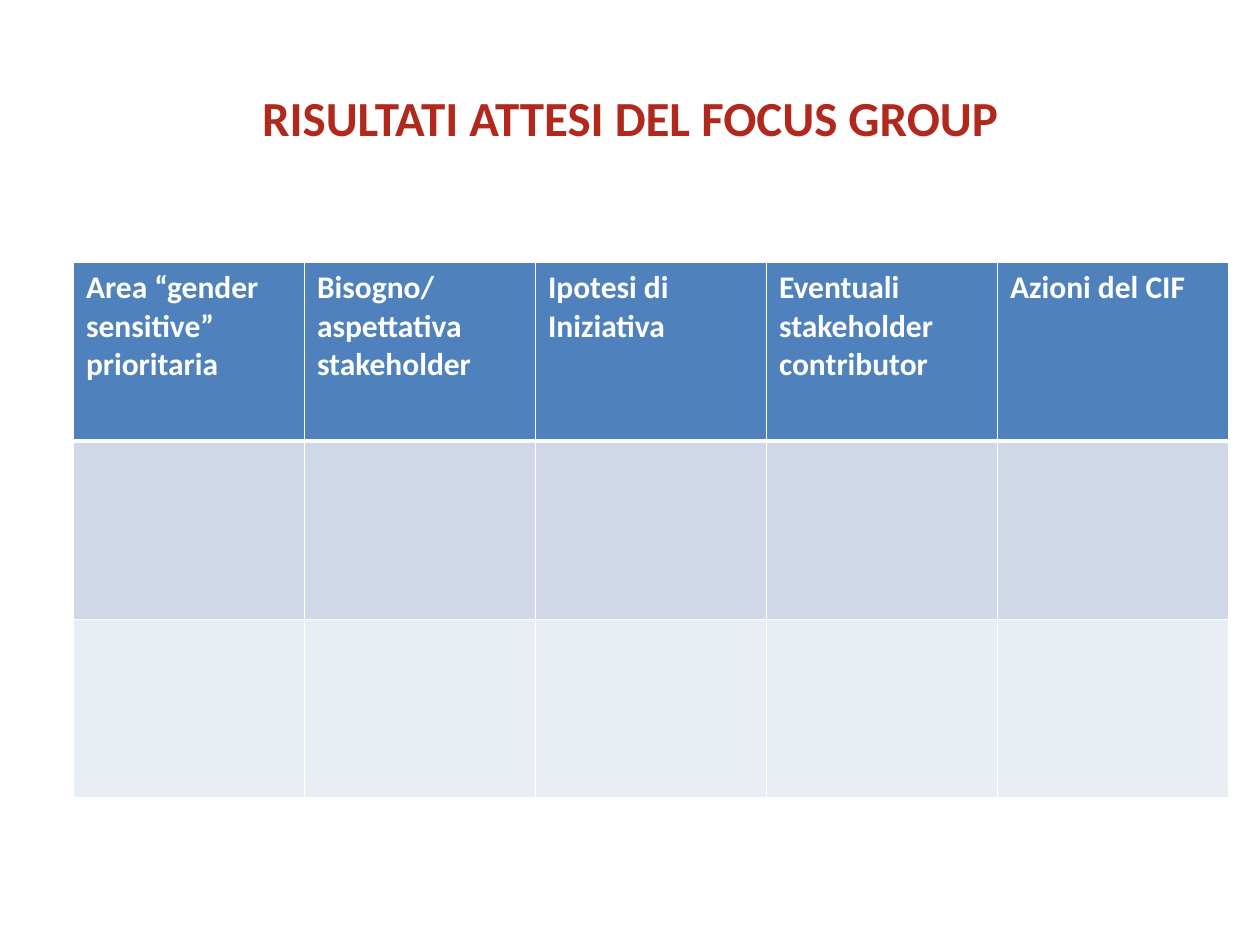
from lxml import etree
from pptx import Presentation, util as u
from pptx.dml.color import RGBColor
from pptx.enum import text
from pptx.oxml.ns import qn

HEADERS = [
    "Area “gender sensitive” prioritaria",
    "Bisogno/aspettativa stakeholder",
    "Ipotesi di Iniziativa",
    "Eventuali stakeholder contributor",
    "Azioni del CIF",
]
ROW_FILLS = ["4F81BD", "D0D8E8", "E9EDF4"]


def color(value):
    return RGBColor.from_string(value)


def write(tf, content, *, font, size, fill, bold=False,
          align=text.PP_ALIGN.LEFT, anchor=text.MSO_ANCHOR.TOP):
    tf.word_wrap = True
    tf.vertical_anchor = anchor
    p = tf.paragraphs[0]
    p.alignment = align
    r = p.add_run()
    r.text = content
    r.font.name = font
    r.font.size = u.Pt(size)
    r.font.bold = bold
    r.font.color.rgb = color(fill)


class SlideBuilder:
    font = "Calibri"
    title_color = "B1291C"
    white = "FFFFFF"

    def __init__(self, s):
        self.s = s

    def title(self, content, x, y, w, h):
        sp = self.s.shapes.add_textbox(u.Cm(x), u.Cm(y), u.Cm(w), u.Cm(h))
        write(sp.text_frame, content, font=self.font, size=28, bold=True,
              fill=self.title_color, align=text.PP_ALIGN.CENTER,
              anchor=text.MSO_ANCHOR.MIDDLE)

    def border(self, cell, side, width):
        tc_pr = cell._tc.get_or_add_tcPr()
        ln = etree.SubElement(tc_pr, qn(f"a:ln{side}"), w=str(u.Pt(width)))
        solid = etree.SubElement(ln, qn("a:solidFill"))
        etree.SubElement(solid, qn("a:srgbClr"), val=self.white)

    def table(self, headers, row_fills, x, y, w, h):
        rows, cols = len(row_fills), len(headers)
        table = self.s.shapes.add_table(
            rows, cols, u.Cm(x), u.Cm(y), u.Cm(w), u.Cm(h)).table
        for column in table.columns:
            column.width = u.Cm(w / cols)
        for i, fill in enumerate(row_fills):
            table.rows[i].height = u.Cm(h / rows)
            for cell in table.rows[i].cells:
                # Thick rule between header and body
                widths = {"L": 1, "R": 1, "T": 3 if i == 1 else 1,
                          "B": 3 if i == 0 else 1}
                for side, width in widths.items():
                    self.border(cell, side, width)
                cell.fill.solid()
                cell.fill.fore_color.rgb = color(fill)
        for cell, header in zip(table.rows[0].cells, headers):
            write(cell.text_frame, header, font=self.font, size=18,
                  bold=True, fill=self.white)


def main():
    prs = Presentation()
    prs.slide_width, prs.slide_height = u.Cm(25.4), u.Cm(19.05)
    slide = SlideBuilder(prs.slides.add_slide(prs.slide_layouts[6]))

    # Title
    slide.title("RISULTATI ATTESI DEL FOCUS GROUP", 1.27, 0.76, 22.86, 3.18)

    # Expected results grid
    slide.table(HEADERS, ROW_FILLS, 1.48, 5.29, 23.29, 10.8)

    prs.save("out.pptx")


if __name__ == "__main__":
    main()
